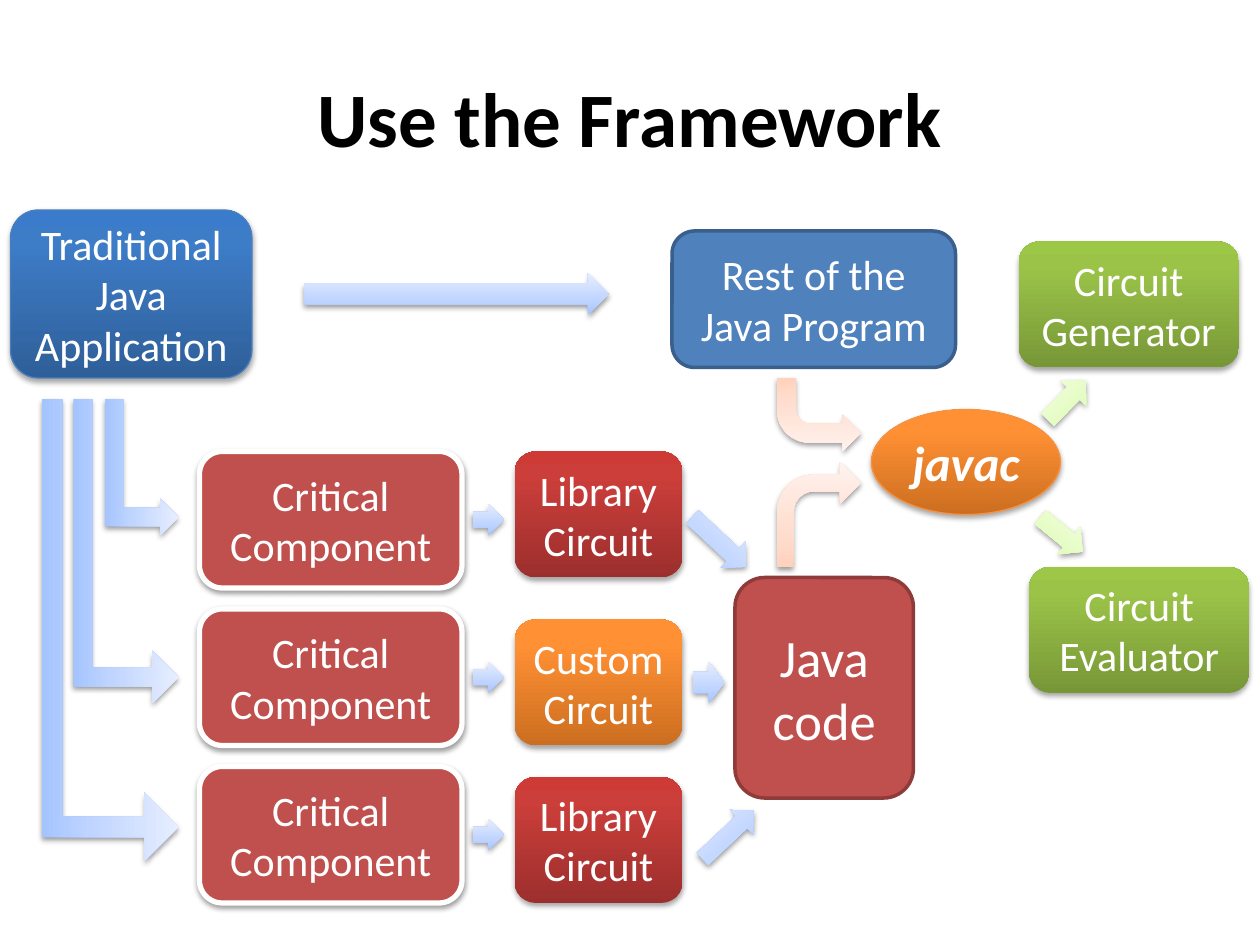
from dataclasses import dataclass

from lxml.etree import SubElement
from pptx import Presentation
from pptx.dml.color import RGBColor
from pptx.enum.shapes import MSO_SHAPE
from pptx.enum.text import MSO_ANCHOR, PP_ALIGN
from pptx.oxml.ns import qn
from pptx.util import Emu, Pt

PX = 7620  # EMU per px: 120 px to the inch


@dataclass(frozen=True)
class Theme:
    font: str = "Calibri"
    title: int = 44
    code: int = 30
    tool: int = 28
    body: int = 24
    ink: str = "000000"
    paper: str = "FFFFFF"
    blue: str = "4F81BD"
    blue_edge: str = "3A5F8C"
    red: str = "C0504D"
    red_edge: str = "8E3B39"
    app_edge: str = "4B7EBC"
    tool_edge: str = "F69240"
    # gradients run from bottom to top: (percent, colour)
    deep_blue: tuple = ((0, "2F5F99"), (80, "3D7CC7"), (100, "3A7CCB"))
    deep_red: tuple = ((0, "9C2F2D"), (80, "CB3E3A"), (100, "CE3B37"))
    orange: tuple = ((0, "CC6E20"), (80, "FF9034"), (100, "FF9136"))
    green: tuple = ((0, "779737"), (80, "9BC348"), (100, "9DC746"))
    pale_blue: tuple = ((0, "A4C4FF"), (35, "BFD4FF"), (100, "E6EEFF"))
    pale_orange: tuple = ((0, "FFD2BD"), (35, "FFDED0"), (100, "FFF2ED"))
    pale_green: tuple = ((0, "DAFDA7"), (35, "E4FCC2"), (100, "F5FFE7"))
    # opacity in percent, distance in EMU
    strong_shadow: tuple = (35, 23000)
    soft_shadow: tuple = (38, 20000)


def add_colour(parent, colour):
    return SubElement(parent, qn("a:srgbClr"), val=colour)


def write(tf, text, *, font, size, colour, bold=False, italic=False):
    """Fill a frame with one centred paragraph; a newline is a line break."""
    tf.word_wrap = True
    tf.vertical_anchor = MSO_ANCHOR.MIDDLE
    p = tf.paragraphs[0]
    p.alignment = PP_ALIGN.CENTER
    for i, line in enumerate(text.split("\n")):
        if i:
            p.add_line_break()
        r = p.add_run()
        r.text = line
        r.font.name = font
        r.font.size = Pt(size)
        r.font.bold = bold
        r.font.italic = italic
        r.font.color.rgb = RGBColor.from_string(colour)


class Deck:
    def __init__(self, theme):
        self.theme = theme
        self.prs = Presentation()
        self.prs.slide_width = Emu(1200 * PX)
        self.prs.slide_height = Emu(900 * PX)
        self.s = self.prs.slides.add_slide(self.prs.slide_layouts[6])

    def title(self, text, x, y, w, h):
        box = self.s.shapes.add_textbox(*(Emu(v * PX) for v in (x, y, w, h)))
        t = self.theme
        write(box.text_frame, text, font=t.font, size=t.title, colour=t.ink, bold=True)

    def shape(self, kind, x, y, w, h, fill, edge=None, shadow=None):
        """Add a preset shape; fill is a colour or gradient, edge is (colour, points)."""
        sp = self.s.shapes.add_shape(kind, *(Emu(v * PX) for v in (x, y, w, h)))
        if isinstance(fill, str):
            sp.fill.solid()
            sp.fill.fore_color.rgb = RGBColor.from_string(fill)
        else:
            self.grade(sp, fill)
        if edge:
            sp.line.color.rgb = RGBColor.from_string(edge[0])
            sp.line.width = Pt(edge[1])
        else:
            sp.line.fill.background()
        sp.shadow.inherit = False
        if shadow:
            self.cast(sp, *shadow)
        return sp

    def grade(self, sp, stops):
        sp.fill.gradient()
        sp.fill.gradient_angle = 90
        gs_list = next(sp._element.spPr.iter(qn("a:gsLst")))
        for gs in list(gs_list):
            gs_list.remove(gs)
        for percent, colour in stops:
            add_colour(SubElement(gs_list, qn("a:gs"), pos=str(percent * 1000)), colour)

    def cast(self, sp, opacity, distance):
        effects = sp._element.spPr.find(qn("a:effectLst"))
        shadow = SubElement(effects, qn("a:outerShdw"), blurRad="40000",
                            dist=str(distance), dir="5400000", rotWithShape="0")
        SubElement(add_colour(shadow, self.theme.ink), qn("a:alpha"), val=str(opacity * 1000))

    def box(self, text, x, y, w, h, fill, *, edge=None, shadow=None, size=None,
            kind=MSO_SHAPE.ROUNDED_RECTANGLE, **style):
        t = self.theme
        sp = self.shape(kind, x, y, w, h, fill, edge, shadow)
        write(sp.text_frame, text, font=t.font, size=size or t.body, colour=t.paper, **style)

    def arrow(self, x, y, w, h, fill, *, kind=MSO_SHAPE.RIGHT_ARROW, turn=0,
              adjust=(), flip=False):
        sp = self.shape(kind, x, y, w, h, fill, shadow=self.theme.soft_shadow)
        sp.rotation = turn
        for i, value in enumerate(adjust):
            sp.adjustments[i] = value
        if flip:
            sp._element.spPr.find(qn("a:xfrm")).set("flipV", "1")

    def elbow(self, x, y, w, h, fill, thickness):
        """Down-then-right arrow, placed by the box it covers once turned."""
        shift = (w - h) // 2
        self.arrow(x + shift, y - shift, h, w, fill, kind=MSO_SHAPE.BENT_UP_ARROW,
                   turn=90, adjust=(thickness, 0.25, 0.25))


def main():
    t = Theme()
    d = Deck(t)
    strong = t.strong_shadow

    d.box("Traditional Java Application", 10, 200, 230, 160, t.deep_blue,
          edge=(t.app_edge, 0.75), shadow=strong)

    row_pitch = 150
    circuits = (("Library\nCircuit", 430, t.deep_red),
                ("Custom Circuit", 590, t.orange),
                ("Library\nCircuit", 740, t.deep_red))
    for i, (name, y, fill) in enumerate(circuits):
        d.box("Critical Component", 190, 430 + i * row_pitch, 250, 130, t.red,
              edge=(t.paper, 3), shadow=t.soft_shadow)
        d.box(name, 490, y, 160, 120, fill, shadow=strong)
        d.arrow(450, 480 + i * row_pitch, 30, 30, t.pale_blue)

    d.box("Rest of the Java Program", 640, 220, 270, 130, t.blue, edge=(t.blue_edge, 2))
    d.box("Java code", 700, 550, 170, 210, t.red, edge=(t.red_edge, 2), size=t.code)
    d.box("javac", 830, 390, 180, 100, t.orange, kind=MSO_SHAPE.OVAL,
          edge=(t.tool_edge, 0.75), shadow=strong, size=t.tool, bold=True, italic=True)
    d.box("Circuit Generator", 970, 230, 210, 120, t.green, shadow=strong)
    d.box("Circuit Evaluator", 980, 540, 210, 120, t.green, shadow=strong)

    # application to components: each elbow starts further left and reaches lower
    for i, (height, thickness) in enumerate(((130, 0.25), (290, 0.18), (440, 0.15))):
        d.elbow(100 - 30 * i, 380, 70 + 30 * i, height, t.pale_blue, thickness)

    # circuits to Java code
    d.arrow(650, 499, 70, 34, t.pale_blue, turn=43)
    d.arrow(660, 630, 30, 40, t.pale_blue)
    d.arrow(660, 779, 67, 32, t.pale_blue, turn=316.7)

    # both sources into javac
    d.arrow(740, 440, 80, 100, t.pale_orange, kind=MSO_SHAPE.BENT_ARROW,
            adjust=(0.2, 0.25, 0.25, 0.44))
    d.arrow(740, 360, 80, 70, t.pale_orange, kind=MSO_SHAPE.BENT_ARROW,
            adjust=(0.26, 0.25, 0.25, 0.44), flip=True)

    # javac to its outputs
    d.arrow(990, 364, 52, 34, t.pale_green, turn=314.4)
    d.arrow(985, 492, 52, 34, t.pale_green, turn=39.2)

    d.arrow(290, 260, 290, 40, t.pale_blue)
    d.title("Use the Framework", 60, 36, 1080, 150)
    d.prs.save("out.pptx")


if __name__ == "__main__":
    main()
